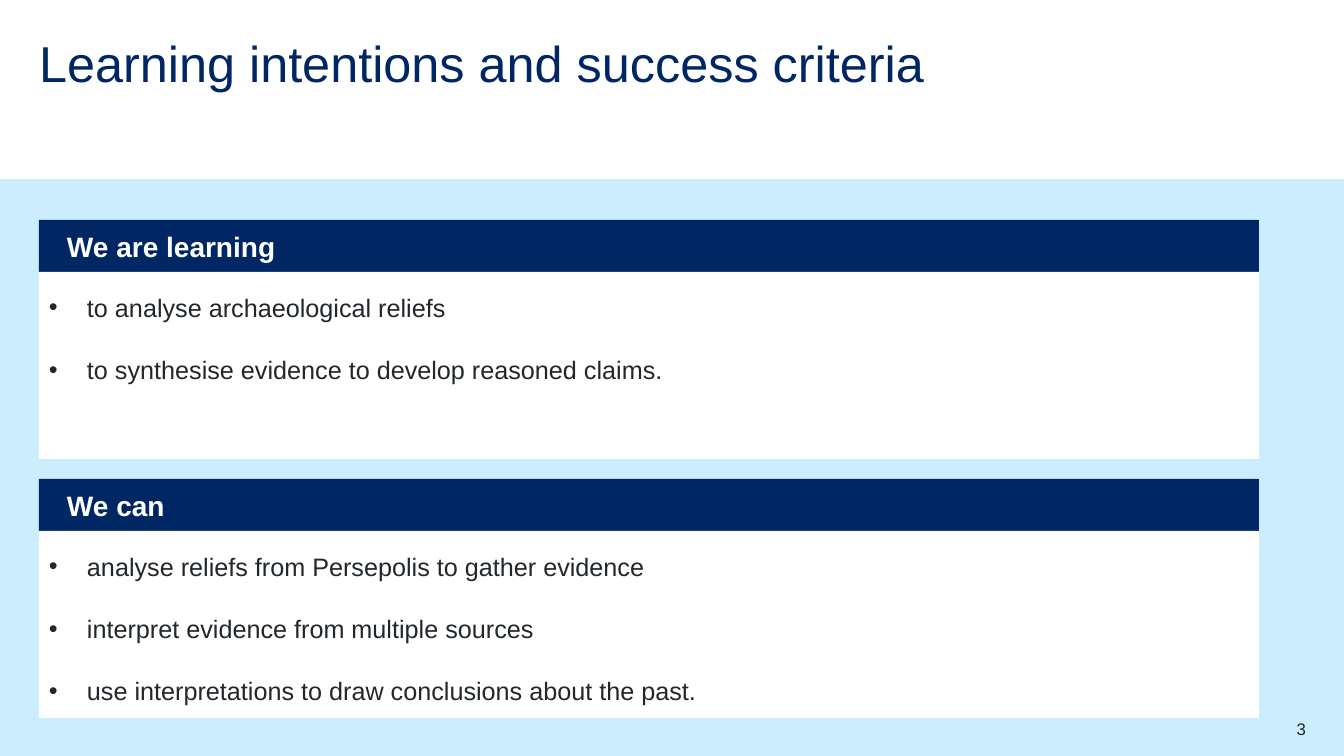
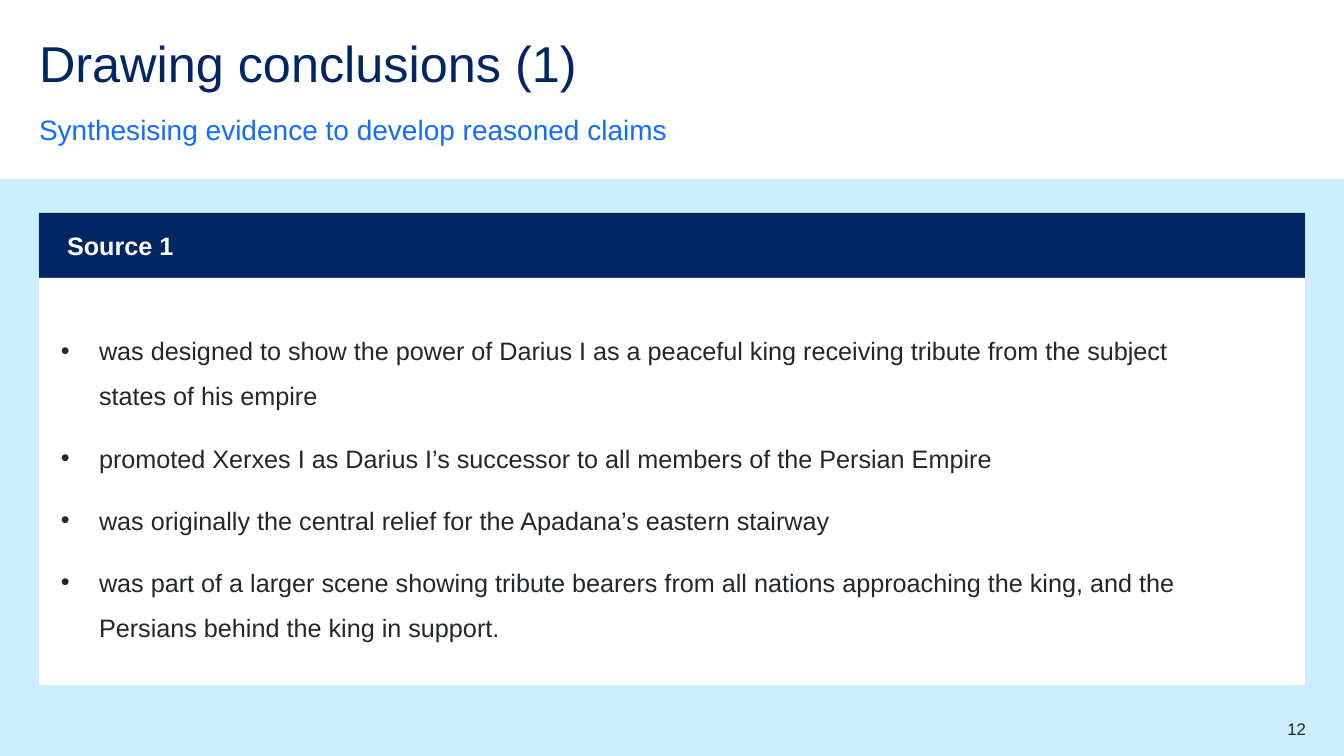
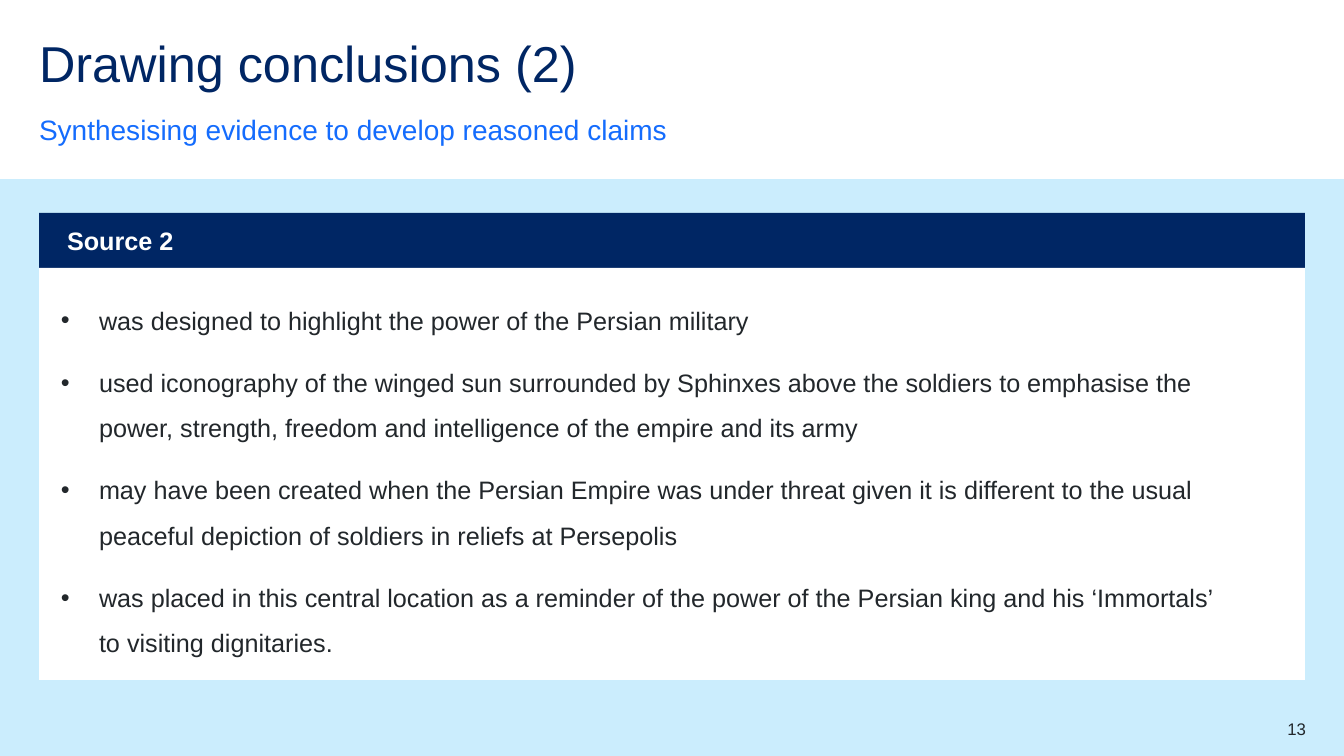
from lxml import etree
from pptx import Presentation
from pptx.dml.color import RGBColor
from pptx.enum import shapes, text
from pptx.oxml import ns
from pptx.util import Pt

W, H = 1344, 756
EMU_PER_PX = 12192000 / W
MARGIN = 39
FONT = "Arial"
COLORS = {
    "navy": "002664",
    "blue": "146CFD",
    "sky": "CBEDFD",
    "white": "FFFFFF",
    "ink": "22272B",
}
TOP, MIDDLE, BOTTOM = (
    text.MSO_ANCHOR.TOP, text.MSO_ANCHOR.MIDDLE, text.MSO_ANCHOR.BOTTOM)
SUBTITLE = "Synthesising evidence to develop reasoned claims"


def px(n):
    return round(n * EMU_PER_PX)


def color(name):
    return RGBColor.from_string(COLORS[name])


def place(sp, box):
    sp.left, sp.top, sp.width, sp.height = map(px, box)


def write(sp, lines, size, ink, anchor=TOP, insets=(0, 0, 0, 0), bold=False,
          align=text.PP_ALIGN.LEFT, spacing=None, after=None):
    tf = sp.text_frame
    tf.word_wrap = True
    tf.auto_size = text.MSO_AUTO_SIZE.NONE
    tf.vertical_anchor = anchor
    tf.margin_left, tf.margin_top, tf.margin_right, tf.margin_bottom = map(px, insets)
    tf.text = "\n".join(lines)
    for p in tf.paragraphs:
        p.alignment = align
        p.line_spacing = spacing
        if after is not None:
            p.space_after = Pt(after)
        for r in p.runs:
            r.font.name = FONT
            r.font.size = Pt(size)
            r.font.bold = bold
            r.font.color.rgb = color(ink)


def add_bullets(sp, indent, hang=38):
    for p in sp.text_frame.paragraphs:
        pPr = p._p.get_or_add_pPr()
        pPr.set("marL", str(px(indent)))
        pPr.set("indent", str(px(-hang)))
        etree.SubElement(pPr, ns.qn("a:buFont")).set("typeface", FONT)
        etree.SubElement(pPr, ns.qn("a:buChar")).set("char", "•")


def add_rect(s, box, fill):
    sp = s.shapes.add_shape(shapes.MSO_SHAPE.RECTANGLE, *map(px, box))
    sp.shadow.inherit = False
    sp.fill.solid()
    sp.fill.fore_color.rgb = color(fill)
    sp.line.fill.background()
    return sp


def add_text(s, box, line, size, ink, **style):
    sp = s.shapes.add_textbox(*map(px, box))
    write(sp, [line], size, ink, **style)


def add_panel(s, box, head_height, heading, bullets, head_size, indent, anchor):
    x, y, w, h = box
    head = add_rect(s, (x, y, w, head_height), "navy")
    write(head, [heading], head_size, "white", MIDDLE, (28, 0, 0, 0), bold=True)
    body = add_rect(s, (x, y + head_height, w, h - head_height), "white")
    write(body, bullets, 18, "ink", anchor, (10, 5, 10, 5), spacing=1.5, after=12)
    add_bullets(body, indent)


def add_band(layout, s):
    band = add_rect(s, (0, 179, W, H - 179), "sky")
    layout.shapes._spTree.insert(2, band._element)


def add_slide(prs, layout, title, number, subtitle=None):
    s = prs.slides.add_slide(layout)
    place(s.shapes.title, (MARGIN, 39, 1131, 57))
    write(s.shapes.title, [title], 36, "navy", spacing=0.9)
    if subtitle:
        add_text(s, (MARGIN, 112, 1111, 34), subtitle, 20, "blue",
                 anchor=BOTTOM, spacing=1.5, after=12)
    add_text(s, (1227, 719, 79, 20), str(number), 12, "ink",
             align=text.PP_ALIGN.RIGHT)
    return s


def intentions_slide(prs, layout, title, number, panels):
    s = add_slide(prs, layout, title, number)
    height, gap = 239, 20
    for i, (heading, bullets) in enumerate(panels):
        box = (MARGIN, 220 + i * (height + gap), 1220, height)
        add_panel(s, box, 52, heading, bullets, 20, 38, TOP)
    return s


def source_slide(prs, layout, title, number, heading, bullets, height, head_height):
    s = add_slide(prs, layout, title, number, SUBTITLE)
    box = (MARGIN, 213, 1266, height)
    add_panel(s, box, head_height, heading, bullets, 18, 50, MIDDLE)


def main():
    prs = Presentation()
    prs.slide_width, prs.slide_height = px(W), px(H)
    layout = prs.slide_layouts[5]
    s = intentions_slide(prs, layout, "Learning intentions and success criteria", 3, [
        ("We are learning", [
            "to analyse archaeological reliefs",
            "to synthesise evidence to develop reasoned claims.",
        ]),
        ("We can", [
            "analyse reliefs from Persepolis to gather evidence",
            "interpret evidence from multiple sources",
            "use interpretations to draw conclusions about the past.",
        ]),
    ])
    add_band(layout, s)
    source_slide(prs, layout, "Drawing conclusions (1)", 12, "Source 1", [
        "was designed to show the power of Darius I as a peaceful king receiving "
        "tribute from the subject\vstates of his empire",
        "promoted Xerxes I as Darius I’s successor to all members of the Persian Empire",
        "was originally the central relief for the Apadana’s eastern stairway",
        "was part of a larger scene showing tribute bearers from all nations "
        "approaching the king, and the\vPersians behind the king in support.",
    ], 472, 65)
    source_slide(prs, layout, "Drawing conclusions (2)", 13, "Source 2", [
        "was designed to highlight the power of the Persian military",
        "used iconography of the winged sun surrounded by Sphinxes above the soldiers "
        "to emphasise the\vpower, strength, freedom and intelligence of the empire "
        "and its army",
        "may have been created when the Persian Empire was under threat given it is "
        "different to the usual\vpeaceful depiction of soldiers in reliefs at Persepolis",
        "was placed in this central location as a reminder of the power of the Persian "
        "king and his ‘Immortals’\vto visiting dignitaries.",
    ], 467, 55)
    prs.save("out.pptx")


if __name__ == "__main__":
    main()
